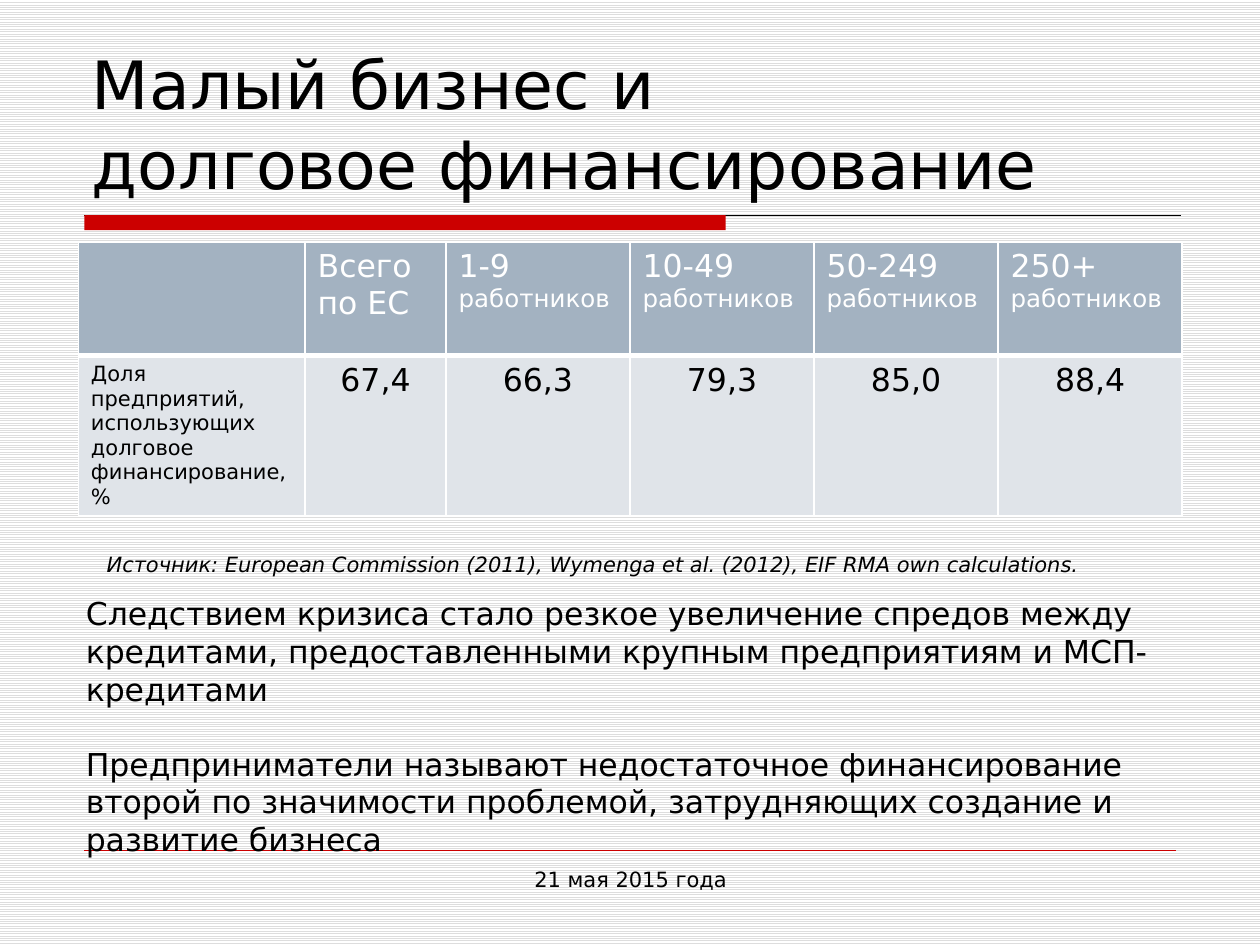
from dataclasses import dataclass

from lxml.etree import SubElement
from pptx import Presentation
from pptx.dml.color import RGBColor
from pptx.enum.dml import MSO_PATTERN
from pptx.enum.shapes import MSO_CONNECTOR, MSO_SHAPE
from pptx.enum.text import MSO_ANCHOR, PP_ALIGN
from pptx.oxml.ns import qn
from pptx.util import Cm, Pt


@dataclass(frozen=True)
class Theme:
    font: str = "DejaVu Sans"
    ink: str = "000000"
    paper: str = "FFFFFF"
    stripe: str = "DDDDDD"
    accent: str = "CC0000"
    header: str = "A3B2C1"
    body: str = "E0E4E9"
    title_size: int = 38
    text_size: int = 18
    unit_size: int = 14
    small_size: int = 12


THEME = Theme()

# Each header is a list of (text, size) spans
HEADERS = [[], [("Всего по ЕС", THEME.text_size)]] + [
    [(staff + " ", THEME.text_size), ("работников", THEME.unit_size)]
    for staff in ("1-9", "10-49", "50-249", "250+")
]
ROW_LABEL = "Доля предприятий, использующих долговое финансирование, %"
SHARES = ["67,4", "66,3", "79,3", "85,0", "88,4"]
COLUMN_WIDTHS = [4.57, 2.84] + [3.71] * 4
ROW_HEIGHTS = [2.29, 3.23]
SOURCE = ("Источник: European Commission (2011), Wymenga et al. (2012), "
          "EIF RMA own calculations.")
CONCLUSIONS = [
    "Следствием кризиса стало резкое увеличение спредов между кредитами, "
    "предоставленными крупным предприятиям и МСП-кредитами",
    "Предприниматели называют недостаточное финансирование второй по "
    "значимости проблемой, затрудняющих создание и развитие бизнеса",
]


def rgb(value):
    return RGBColor.from_string(value)


def style_font(font, size, color=THEME.ink, italic=False):
    font.name, font.size = THEME.font, Pt(size)
    font.bold, font.italic = False, italic
    font.color.rgb = rgb(color)


def place(shape, box):
    shape.left, shape.top, shape.width, shape.height = (Cm(v) for v in box)


def add_rule(page, left, top, width, color, weight):
    rule = page.shapes.add_connector(
        MSO_CONNECTOR.STRAIGHT, Cm(left), Cm(top), Cm(left + width), Cm(top))
    rule.line.color.rgb = rgb(color)
    rule.line.width = Pt(weight)
    SubElement(rule._element.spPr, qn("a:effectLst"))


def add_decor(page, box):
    """Red bar and thin rule under the title, hairline above the footer."""
    left, top, width, height = box
    add_rule(page, left, top, width, THEME.ink, 0.75)
    bar = page.shapes.add_shape(
        MSO_SHAPE.RECTANGLE, Cm(left), Cm(top), Cm(12.93), Cm(0.3))
    bar.shadow.inherit = False
    bar.fill.solid()
    bar.fill.fore_color.rgb = rgb(THEME.accent)
    bar.line.fill.background()
    add_rule(page, left, top + height, width - 0.1, THEME.accent, 0.25)


def add_title(page, box):
    title = page.shapes.title
    place(title, box)
    frame = title.text_frame
    frame.text = "Малый бизнес и\vдолговое финансирование"
    frame.vertical_anchor = MSO_ANCHOR.BOTTOM
    para = frame.paragraphs[0]
    para.alignment = PP_ALIGN.LEFT
    style_font(para.font, THEME.title_size)


def add_text(page, box, lines, size, align=PP_ALIGN.LEFT, italic=False, gap=0):
    frame = page.shapes.add_textbox(*(Cm(v) for v in box)).text_frame
    frame.word_wrap = True
    frame.text = "\n".join(lines)
    for index, para in enumerate(frame.paragraphs):
        para.alignment = align
        para.space_before = Pt(gap if index else 0)
        style_font(para.font, size, italic=italic)


def format_cell(cell, fill, bottom=1):
    """White borders first, then the fill, as the schema orders them."""
    props = cell._tc.get_or_add_tcPr()
    for side, weight in (("L", 1), ("R", 1), ("T", 1), ("B", bottom)):
        line = SubElement(props, qn("a:ln" + side), w=str(Pt(weight)))
        solid = SubElement(line, qn("a:solidFill"))
        SubElement(solid, qn("a:srgbClr"), val=THEME.paper)
    cell.fill.solid()
    cell.fill.fore_color.rgb = rgb(fill)


def add_share_table(page, left, top):
    table = page.shapes.add_table(
        len(ROW_HEIGHTS), len(COLUMN_WIDTHS), Cm(left), Cm(top),
        Cm(sum(COLUMN_WIDTHS)), Cm(sum(ROW_HEIGHTS))).table
    for column, width in zip(table.columns, COLUMN_WIDTHS):
        column.width = Cm(width)
    for row, height in zip(table.rows, ROW_HEIGHTS):
        row.height = Cm(height)

    # Header row
    for index, spans in enumerate(HEADERS):
        cell = table.cell(0, index)
        format_cell(cell, THEME.header, bottom=3)
        for text, size in spans:
            span = cell.text_frame.paragraphs[0].add_run()
            span.text = text
            style_font(span.font, size, THEME.paper)

    # Label and values
    for index, text in enumerate([ROW_LABEL] + SHARES):
        cell = table.cell(1, index)
        format_cell(cell, THEME.body)
        cell.text = text
        para = cell.text_frame.paragraphs[0]
        para.alignment = PP_ALIGN.CENTER if index else PP_ALIGN.LEFT
        style_font(para.font, THEME.text_size if index else THEME.small_size)


def build_slide(deck):
    page = deck.slides.add_slide(deck.slide_layouts[5])
    fill = page.background.fill
    fill.patterned()
    fill.pattern = MSO_PATTERN.LIGHT_HORIZONTAL
    fill.fore_color.rgb = rgb(THEME.stripe)
    fill.back_color.rgb = rgb(THEME.paper)

    add_decor(page, (1.7, 4.34, 22.1, 12.8))
    add_title(page, (1.6, 0.84, 22.22, 3.38))
    add_share_table(page, 1.58, 4.88)
    add_text(page, (8.69, 17.35, 8.05, 1.32), ["21 мая 2015 года"],
             THEME.small_size, align=PP_ALIGN.CENTER)
    add_text(page, (1.9, 11, 20.96, 0.76), [SOURCE],
             THEME.small_size, italic=True)
    add_text(page, (1.48, 11.86, 23.29, 6.4), CONCLUSIONS,
             THEME.text_size, gap=21)


def main():
    deck = Presentation()
    deck.slide_width, deck.slide_height = Cm(25.4), Cm(19.05)
    build_slide(deck)
    deck.save("out.pptx")


if __name__ == "__main__":
    main()
